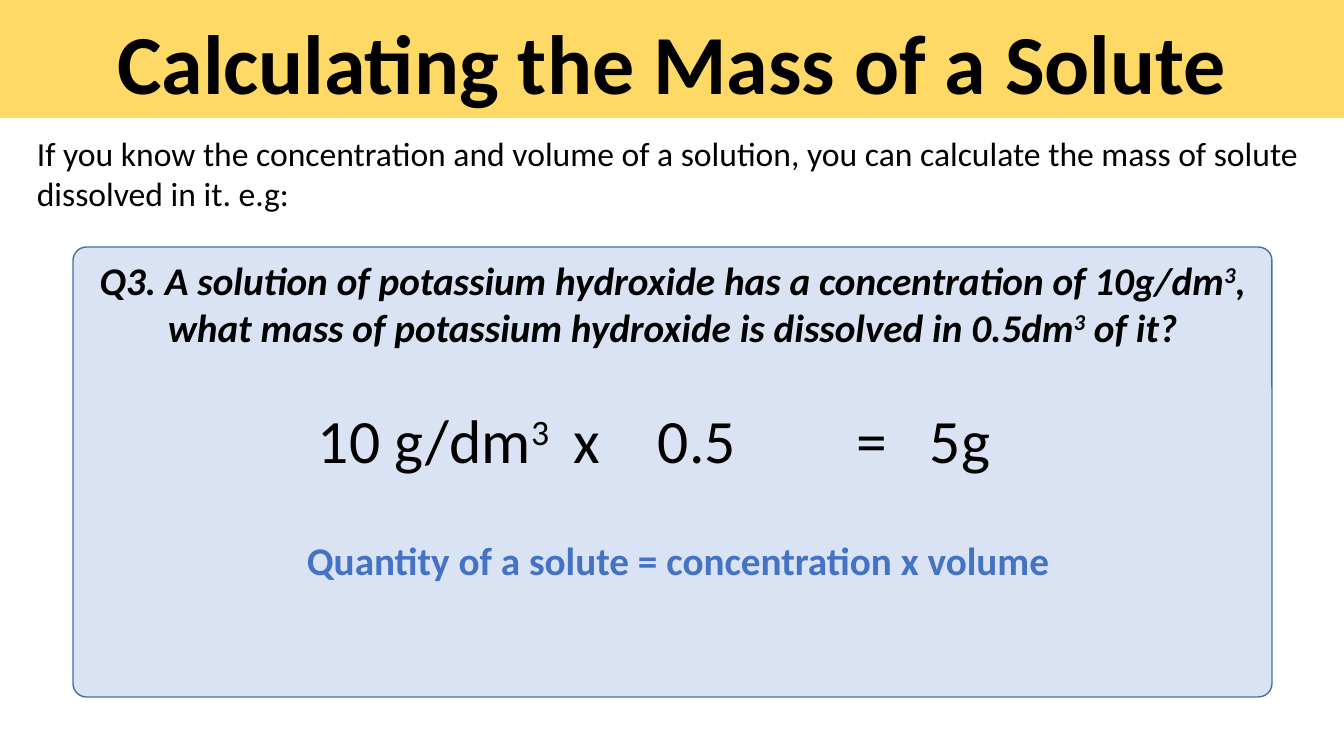
from dataclasses import dataclass

from pptx import Presentation
from pptx import util as u
from pptx.dml.color import RGBColor
from pptx.enum import shapes, text


@dataclass(frozen=True)
class Theme:
    face: str = "Calibri"
    ink: str = "000000"
    band: str = "FFD966"
    panel: str = "DAE3F3"
    edge: str = "43739E"
    key: str = "4472C4"
    head: int = 60
    sum: int = 44
    ask: int = 28
    body: int = 24


def px(n):
    return u.Emu(round(n * 914400 / 100.8))


def apply(item, form):
    for name, value in form.items():
        setattr(item, name, value)


class Page:
    def __init__(self, deck, theme):
        self.theme = theme
        self.slide = deck.slides.add_slide(deck.slide_layouts[5])

    def letter(self, shape, words, size, color=None, align=text.PP_ALIGN.LEFT,
               anchor=text.MSO_ANCHOR.TOP, space=1.0, **style):
        apply(shape.text_frame, {
            "word_wrap": True,
            "auto_size": text.MSO_AUTO_SIZE.NONE,
            "vertical_anchor": anchor,
        })
        para = shape.text_frame.paragraphs[0]
        apply(para, {"alignment": align, "line_spacing": space})
        form = {"name": self.theme.face, "size": u.Pt(size), **style}
        for i, part in enumerate(words.split("^")):
            run = para.add_run()
            run.text = part
            apply(run.font, form)
            run.font.color.rgb = RGBColor.from_string(color or self.theme.ink)
            if i % 2:
                run.font._element.set("baseline", "30000")

    def paint(self, shape, color):
        shape.fill.solid()
        shape.fill.fore_color.rgb = RGBColor.from_string(color)

    def title(self, box, words):
        shape = self.slide.shapes.title
        apply(shape, dict(zip(("left", "top", "width", "height"), map(px, box))))
        self.paint(shape, self.theme.band)
        self.letter(shape, words, self.theme.head, align=text.PP_ALIGN.CENTER,
                    anchor=text.MSO_ANCHOR.BOTTOM, space=0.9, bold=True)

    def label(self, box, words, size, **style):
        shape = self.slide.shapes.add_textbox(*map(px, box))
        self.letter(shape, words, size, **style)

    def panel(self, box, words):
        shape = self.slide.shapes.add_shape(
            shapes.MSO_SHAPE.ROUNDED_RECTANGLE, *map(px, box))
        shape.adjustments[0] = 0.03
        shape.shadow.inherit = False
        self.paint(shape, self.theme.panel)
        shape.line.color.rgb = RGBColor.from_string(self.theme.edge)
        shape.line.width = u.Pt(1)
        self.letter(shape, words, self.theme.ask, align=text.PP_ALIGN.CENTER,
                    bold=True, italic=True)


def main():
    deck = Presentation()
    apply(deck, {"slide_width": px(1344), "slide_height": px(756)})
    theme = Theme()
    page = Page(deck, theme)
    page.title((0, 0, 1344, 118), "Calculating the Mass of a Solute")
    page.label((27, 128, 1293, 92),
               "If you know the concentration and volume of a solution, "
               "you can calculate the mass of solute dissolved in it. e.g:",
               theme.body)
    page.panel((73, 247, 1199, 450),
               "Q3. A solution of potassium hydroxide has a concentration of "
               "10g/dm^3^, what mass of potassium hydroxide is dissolved in "
               "0.5dm^3^ of it?")
    terms = (("10 g/dm^3", 308, 256), ("x", 564, 84), ("0.5", 648, 188),
             ("=", 847, 73), ("5g", 920, 225))
    for words, left, width in terms:
        page.label((left, 397, width, 85), words, theme.sum)
    page.label((297, 531, 772, 57),
               "Quantity of a solute = concentration x volume",
               theme.ask, color=theme.key, bold=True)
    deck.save("out.pptx")


if __name__ == "__main__":
    main()
